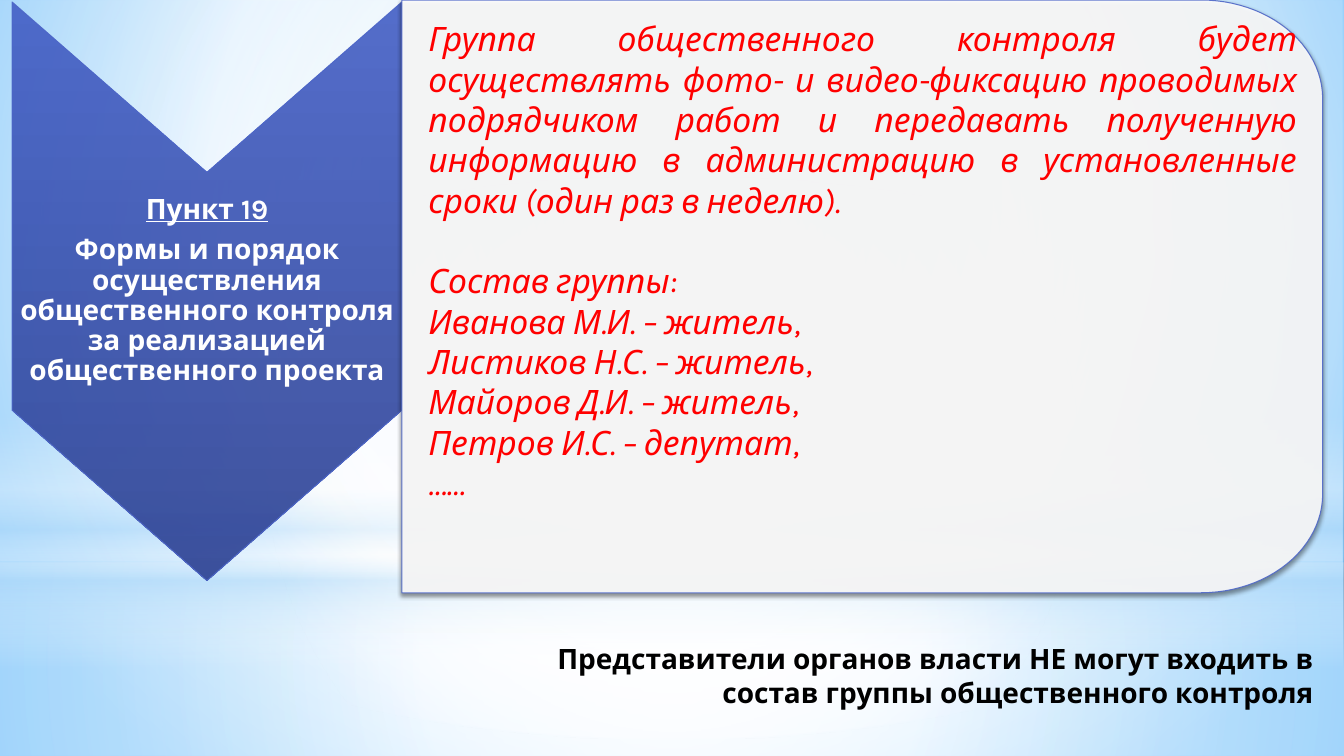
import math
from lxml import etree
from pptx import Presentation
from pptx import util as u
from pptx.dml import color
from pptx.enum import shapes, text
from pptx.oxml import ns

COLORS = {
    "white": "FFFFFF", "black": "000000", "red": "FF0000", "green": "92D050",
    "sky": "B4DCFA", "light": "9ED5FF", "azure": "5BB9FF",
    "line": "4E67C8", "top": "435EC5", "bottom": "2B4092",
}
FONT = "Karla"
WIDTH, HEIGHT = 960, 540
CENTER = (50, 50, 50, 50)

BACKDROP = [(0, "light", 100), (60, "white", 100), (100, "azure", 100)]
GLOWS = [
    ("RECTANGLE", 402, 138, [(0, "white", 91), (37, "white", 76), (100, "sky", 79)], CENTER),
    ("RECTANGLE", 0, 402, [(0, "white", 89), (48, "white", 62), (100, "sky", 79)], CENTER),
    ("RECTANGLE", 296.6, 180, [(0, "white", 0), (29, "white", 30), (45, "sky", 40),
                               (55, "white", 26), (65, "sky", 60), (100, "white", 0)], None),
    ("OVAL", 126, 402, [(0, "white", 100), (56, "white", 0)], CENTER),
]
HEADING = [
    ("Пункт 19", True),
    ("Формы и порядок осуществления общественного контроля за реализацией общественного проекта", False),
]
INTRO = ("Группа общественного контроля будет осуществлять фото- и видео-фиксацию проводимых "
         "подрядчиком работ и передавать полученную информацию в администрацию "
         "в установленные сроки (один раз в неделю).")
MEMBERS = [
    "Состав группы:",
    "Иванова М.И. – житель,",
    "Листиков Н.С. – житель,",
    "Майоров Д.И. – житель,",
    "Петров И.С. – депутат,",
    "……",
]
WARNING = "Представители органов власти НЕ могут входить в состав группы общественного контроля"

ARROW = {"left": 8.64, "top": 1.44, "width": 278.4, "height": 413.3, "notch": 121.7}
CARD = {"left": 287, "top": 0, "right": 944.8, "bottom": 423.4, "radius_x": 87, "radius_y": 70.6}
INTRO_BOX = (298.8, 9.4, 635, 356.4)
WARNING_BOX = (367.9, 455, 577.4, 55.4)


def rgb(name):
    return color.RGBColor.from_string(COLORS[name])


def add_alpha(element, percent):
    for node in element.iter(ns.qn("a:srgbClr")):
        etree.SubElement(node, ns.qn("a:alpha"), val=str(percent * 1000))


def set_gradient(fill, element, stops, focus=None):
    fill.gradient()
    gradient = element.find(".//" + ns.qn("a:gradFill"))
    for child in list(gradient):
        gradient.remove(child)
    stop_list = etree.SubElement(gradient, ns.qn("a:gsLst"))
    for position, name, opacity in stops:
        stop = etree.SubElement(stop_list, ns.qn("a:gs"), pos=str(position * 1000))
        etree.SubElement(stop, ns.qn("a:srgbClr"), val=COLORS[name])
        add_alpha(stop, opacity)
    if focus:
        circle = etree.SubElement(gradient, ns.qn("a:path"), path="circle")
        sides = {side: str(value * 1000) for side, value in zip("ltrb", focus)}
        etree.SubElement(circle, ns.qn("a:fillToRect"), **sides)
    else:
        etree.SubElement(gradient, ns.qn("a:lin"), ang="5400000", scaled="0")


def add_effect(shape, tag, **attributes):
    effects = shape.element.spPr.find(ns.qn("a:effectLst"))
    return etree.SubElement(effects, ns.qn(tag), **attributes)


def add_outline(slide, points):
    builder = slide.shapes.build_freeform(u.Pt(points[0][0]), u.Pt(points[0][1]), scale=1.0)
    builder.add_line_segments([(u.Pt(x), u.Pt(y)) for x, y in points[1:]], close=True)
    shape = builder.convert_to_shape()
    shape.shadow.inherit = False
    shape.line.color.rgb = rgb("line")
    shape.line.width = u.Pt(0.75)
    add_alpha(shape.element.spPr.find(ns.qn("a:ln")), 90)
    return shape


def place(shape, box):
    shape.left, shape.top, shape.width, shape.height = [u.Pt(value) for value in box]
    shape.element.getparent().append(shape.element)


def set_frame(shape, anchor):
    frame = shape.text_frame
    frame.word_wrap = True
    frame.auto_size = text.MSO_AUTO_SIZE.NONE
    frame.vertical_anchor = anchor
    return frame


def add_paragraph(frame, index, words, size, name, align, **style):
    paragraph = frame.paragraphs[0] if index == 0 else frame.add_paragraph()
    paragraph.alignment = align
    paragraph.space_before = u.Pt(0)
    run = paragraph.add_run()
    run.text = words
    run.font.name = FONT
    run.font.size = u.Pt(size)
    run.font.color.rgb = rgb(name)
    for key, value in style.items():
        setattr(run.font, key, value)
    return paragraph


def add_backdrop(slide):
    set_gradient(slide.background.fill, slide.element, BACKDROP, (20, 10, 20, 60))
    for kind, top, height, stops, focus in GLOWS:
        glow = slide.shapes.add_shape(
            getattr(shapes.MSO_SHAPE, kind), 0, u.Pt(top), u.Pt(WIDTH), u.Pt(height))
        glow.shadow.inherit = False
        glow.line.fill.background()
        set_gradient(glow.fill, glow.element.spPr, stops, focus)


def add_arrow(slide):
    left, top, notch = ARROW["left"], ARROW["top"], ARROW["notch"]
    right, bottom = left + ARROW["width"], top + ARROW["height"]
    middle = (left + right) / 2
    arrow = add_outline(slide, [
        (left, top), (middle, top + notch), (right, top),
        (right, bottom - notch), (middle, bottom), (left, bottom - notch)])
    set_gradient(arrow.fill, arrow.element.spPr, [(0, "top", 90), (100, "bottom", 90)])

    title = slide.shapes.title
    place(title, (left, top, ARROW["width"], ARROW["height"]))
    frame = set_frame(title, text.MSO_ANCHOR.MIDDLE)
    frame.margin_left = frame.margin_right = u.Pt(1.44)
    frame.margin_top = frame.margin_bottom = u.Pt(131)
    for index, (words, underlined) in enumerate(HEADING):
        paragraph = add_paragraph(frame, index, words, 20, "white", text.PP_ALIGN.CENTER,
                                  bold=True, underline=underlined)
        paragraph.line_spacing = 0.9
        paragraph.space_after = u.Pt(7)


def add_card(slide):
    left, top, right, bottom = [CARD[key] for key in ("left", "top", "right", "bottom")]
    radius_x, radius_y = CARD["radius_x"], CARD["radius_y"]
    steps = 24
    angles = [math.pi / 2 * step / steps for step in range(steps + 1)]
    upper = [(right - radius_x * (1 - math.sin(angle)), top + radius_y * (1 - math.cos(angle)))
             for angle in angles]
    lower = [(x, top + bottom - y) for x, y in reversed(upper)]
    card = add_outline(slide, [(left, top)] + upper + lower + [(left, bottom)])
    card.fill.solid()
    card.fill.fore_color.rgb = rgb("white")
    add_alpha(card.element.spPr.find(ns.qn("a:solidFill")), 90)
    shadow = add_effect(card, "a:outerShdw", blurRad=str(u.Pt(3.1)), dist=str(u.Pt(1.8)),
                        dir="5400000", rotWithShape="0")
    etree.SubElement(shadow, ns.qn("a:srgbClr"), val=COLORS["black"])
    add_alpha(shadow, 45)

    body = slide.placeholders[1]
    place(body, INTRO_BOX)
    frame = set_frame(body, text.MSO_ANCHOR.TOP)
    for index, words in enumerate([INTRO] + MEMBERS):
        paragraph = add_paragraph(frame, index, words, 24, "red", text.PP_ALIGN.JUSTIFY, italic=True)
        if index == 1:
            paragraph.space_before = u.Pt(28.8)
        properties = paragraph.runs[0].font and paragraph._p.get_or_add_pPr()
        properties.set("marL", "0")
        properties.set("indent", "0")
        etree.SubElement(properties, ns.qn("a:buNone"))


def add_warning(slide):
    warning = slide.shapes.add_shape(
        shapes.MSO_SHAPE.RECTANGLE, *[u.Pt(value) for value in WARNING_BOX])
    warning.shadow.inherit = False
    warning.line.fill.background()
    warning.fill.solid()
    warning.fill.fore_color.rgb = rgb("green")
    add_effect(warning, "a:softEdge", rad=str(u.Pt(50)))
    frame = set_frame(warning, text.MSO_ANCHOR.TOP)
    add_paragraph(frame, 0, WARNING, 20, "black", text.PP_ALIGN.RIGHT, bold=True)


def main():
    presentation = Presentation()
    presentation.slide_width, presentation.slide_height = u.Pt(WIDTH), u.Pt(HEIGHT)
    slide = presentation.slides.add_slide(presentation.slide_layouts[1])
    add_backdrop(slide)
    add_arrow(slide)
    add_card(slide)
    add_warning(slide)
    presentation.save("out.pptx")


if __name__ == "__main__":
    main()
